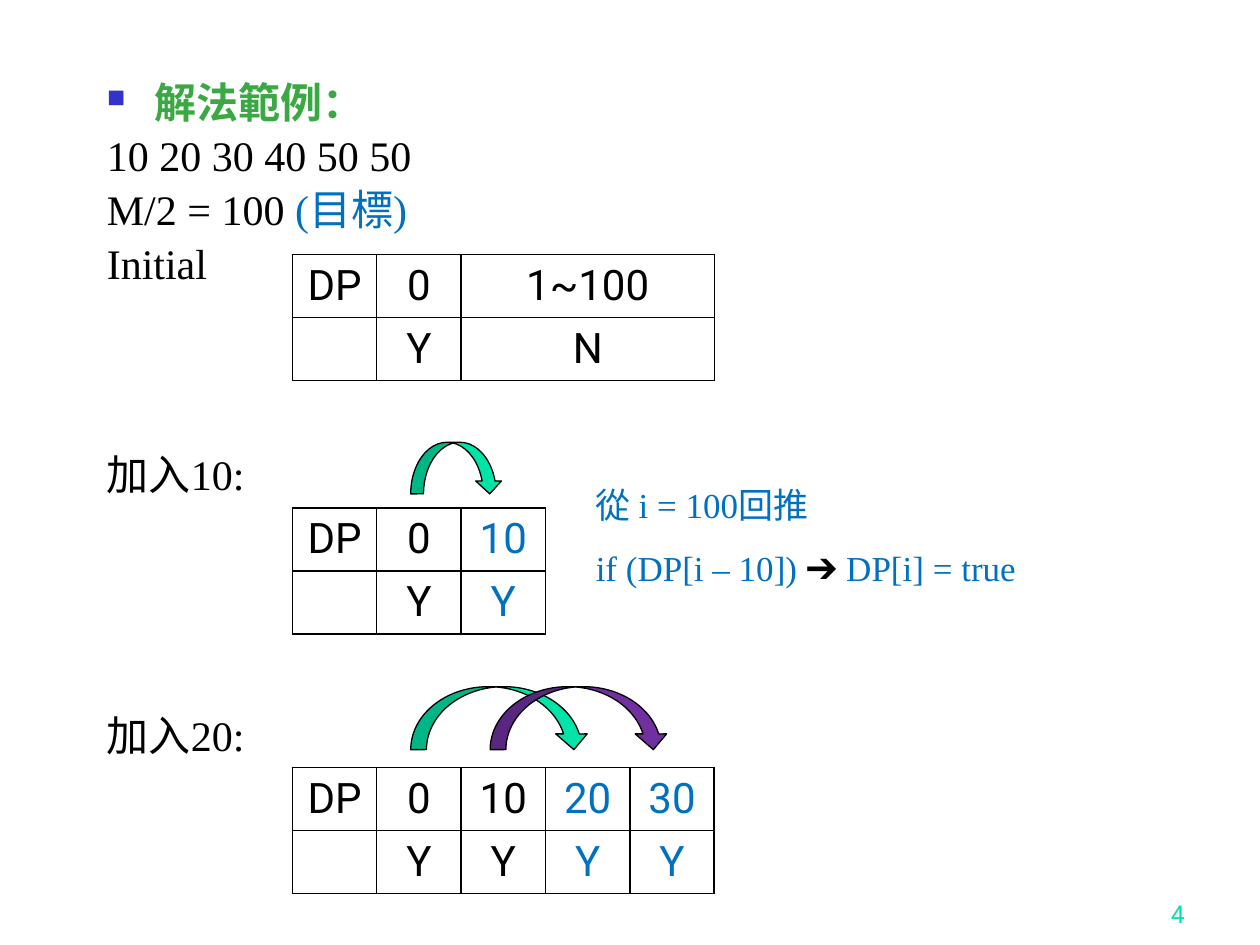
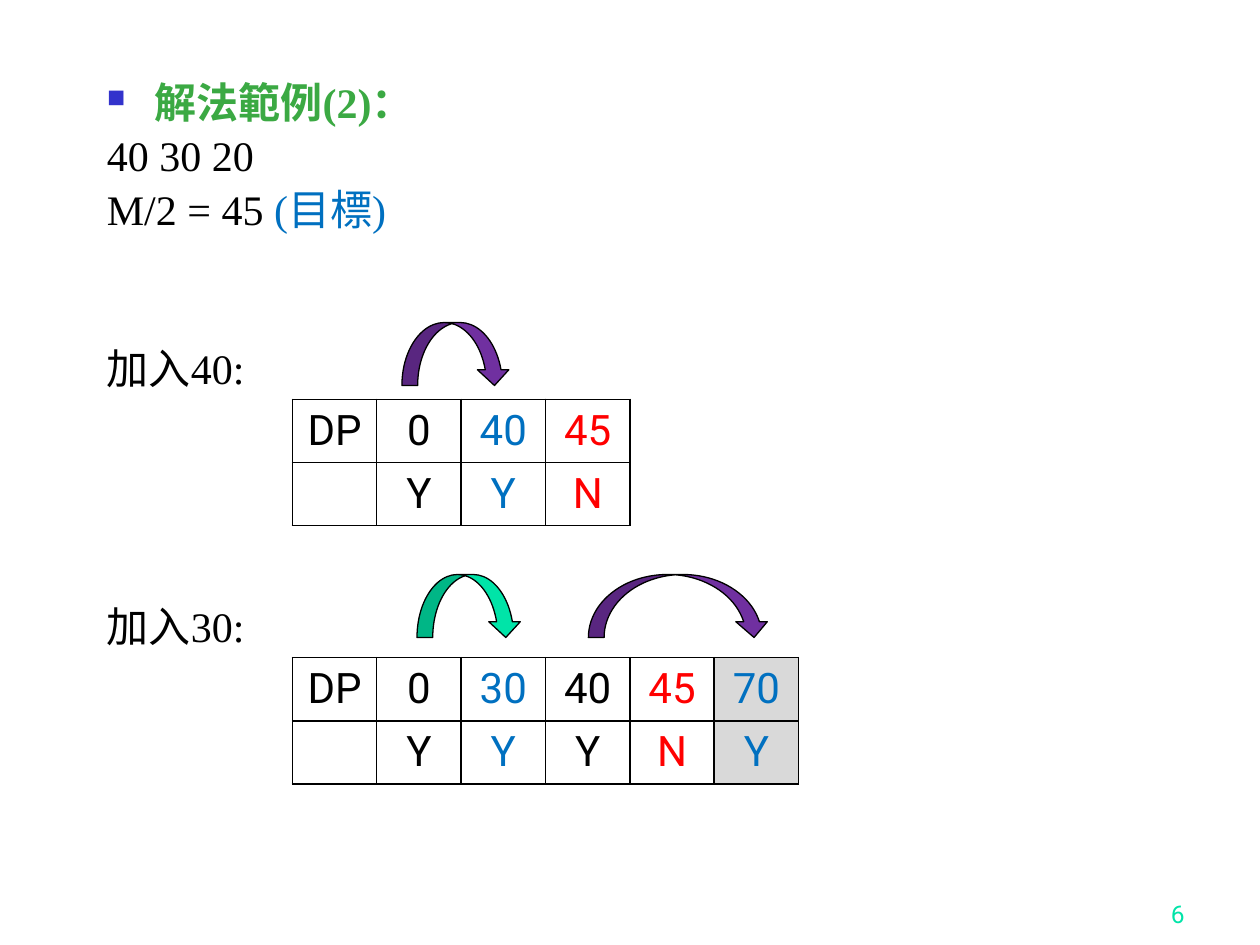
from dataclasses import dataclass

import lxml.etree
import pptx
import pptx.dml.color
import pptx.enum.shapes
import pptx.enum.text
import pptx.oxml.ns
import pptx.util
from pptx.util import Inches

# Shared look
BLACK, WHITE, GRAY, RED = "000000", "FFFFFF", "D9D9D9", "FF0000"
BLUE, GREEN, MINT, PURPLE = "0070C0", "3BA943", "00E4A8", "7030A0"
BULLET_BLUE = "3333CC"
SERIF, SANS = "Times New Roman", "Roboto"
LEFT = 0.75
TABLE_LEFT = 2.32
COLUMN_WIDTH = 0.67
ROW_HEIGHT = 0.41
TEXT_SIZE = 24
ALIGN = pptx.enum.text.PP_ALIGN
ANCHOR = pptx.enum.text.MSO_ANCHOR


@dataclass
class Run:
    text: str
    color: str = BLACK


@dataclass
class Column:
    amount: str
    reachable: str
    color: str = BLACK
    span: int = 1
    fill: str | None = None


@dataclass
class DpTable:
    top: float
    columns: list[Column]
    left: float = TABLE_LEFT


@dataclass
class StepLabel:
    text: str
    top: float


@dataclass
class JumpArrow:
    left: float
    top: float
    width: float
    height: float
    color: str


@dataclass
class ExampleSlide:
    number: str
    heading: str
    lines: list[list[Run]]
    body_width: float
    body_height: float
    labels: list[StepLabel]
    tables: list[DpTable]
    arrows: list[JumpArrow]


HEADER = Column("DP", "")
START = Column("0", "Y")

EXAMPLES = [
    ExampleSlide(
        "4", "解法範例：",
        [[Run("10 20 30 40 50 50")],
         [Run("M/2 = 100 "), Run("(目標)", BLUE)],
         [Run("Initial")]],
        8.97, 2.89,
        [StepLabel("加入10:", 3.51), StepLabel("加入20:", 5.58)],
        [DpTable(2.02, [HEADER, START, Column("1~100", "N", span=3)]),
         DpTable(4.03, [HEADER, START, Column("10", "Y", BLUE)]),
         DpTable(6.09, [HEADER, START, Column("10", "Y"),
                        Column("20", "Y", BLUE), Column("30", "Y", BLUE)])],
        [JumpArrow(3.26, 3.51, 0.73, 0.41, MINT),
         JumpArrow(3.26, 5.45, 1.42, 0.5, MINT),
         JumpArrow(3.89, 5.45, 1.42, 0.5, PURPLE)],
    ),
    ExampleSlide(
        "6", "解法範例(2)：",
        [[Run("40 30 20")],
         [Run("M/2 = 45 "), Run("(目標)", BLUE)]],
        3.24, 1.73,
        [StepLabel("加入40:", 2.67), StepLabel("加入30:", 4.72)],
        [DpTable(3.17, [HEADER, START, Column("40", "Y", BLUE)]),
         DpTable(3.17, [Column("45", "N", RED)], TABLE_LEFT + 3 * COLUMN_WIDTH),
         DpTable(5.22, [HEADER, START, Column("30", "Y", BLUE), Column("40", "Y"),
                        Column("45", "N", RED, fill=WHITE),
                        Column("70", "Y", BLUE, fill=GRAY)])],
        [JumpArrow(3.19, 2.56, 0.86, 0.5, PURPLE),
         JumpArrow(3.31, 4.56, 0.83, 0.5, MINT),
         JumpArrow(4.67, 4.56, 1.44, 0.5, PURPLE)],
    ),
]

RULE_LINES = [
    [Run("從 i = 100回推", BLUE)],
    [Run("if (DP[i – 10]) ", BLUE), Run("➔ "), Run("DP[i] = true", BLUE)],
]


def rgb(color: str) -> pptx.dml.color.RGBColor:
    return pptx.dml.color.RGBColor.from_string(color)


def add_element(parent, tag: str, **attributes: str):
    element = lxml.etree.SubElement(parent, pptx.oxml.ns.qn(tag))
    for name, value in attributes.items():
        element.set(name, value)
    return element


def format_paragraph(paragraph, size: float, font_name: str, color: str) -> None:
    for run in paragraph.runs:
        run.font.size = pptx.util.Pt(size)
        run.font.name = font_name
        run.font.color.rgb = rgb(color)


def fill_paragraph(paragraph, runs: list[Run], size: float, spacing: float) -> None:
    paragraph.line_spacing = spacing
    for part in runs:
        run = paragraph.add_run()
        run.text = part.text
        run.font.size = pptx.util.Pt(size)
        run.font.name = SERIF
        run.font.color.rgb = rgb(part.color)


def add_text_frame(slide, left: float, top: float, width: float, height: float,
                   grow: bool = False):
    box = slide.shapes.add_textbox(Inches(left), Inches(top), Inches(width), Inches(height))
    text_frame = box.text_frame
    text_frame.word_wrap = True
    if grow:
        text_frame.auto_size = pptx.enum.text.MSO_AUTO_SIZE.SHAPE_TO_FIT_TEXT
    return text_frame


def add_bullet(paragraph) -> None:
    properties = paragraph._p.get_or_add_pPr()
    indent = Inches(0.38)
    properties.set("marL", str(indent))
    properties.set("indent", str(-indent))
    bullet_color = add_element(properties, "a:buClr")
    add_element(bullet_color, "a:srgbClr", val=BULLET_BLUE)
    add_element(properties, "a:buSzPct", val="60000")
    add_element(properties, "a:buChar", char="■")


def add_body(slide, example: ExampleSlide) -> None:
    text_frame = add_text_frame(slide, LEFT, 0.36, example.body_width, example.body_height)
    heading = text_frame.paragraphs[0]
    fill_paragraph(heading, [Run(example.heading, GREEN)], TEXT_SIZE, 1.5)
    heading.runs[0].font.bold = True
    for line in example.lines:
        fill_paragraph(text_frame.add_paragraph(), line, TEXT_SIZE, 0.9)
    for paragraph in text_frame.paragraphs:
        paragraph.space_before = pptx.util.Pt(0.2 * TEXT_SIZE)
    add_bullet(heading)


def add_slide_number(slide, number: str) -> None:
    text_frame = add_text_frame(slide, 7.42, 6.92, 2.08, 0.5)
    text_frame.vertical_anchor = ANCHOR.BOTTOM
    text_frame.text = number
    paragraph = text_frame.paragraphs[0]
    paragraph.alignment = ALIGN.RIGHT
    format_paragraph(paragraph, 14, SANS, MINT)


def add_step_label(slide, label: StepLabel) -> None:
    text_frame = add_text_frame(slide, LEFT, label.top, 1.3, 0.5, grow=True)
    text_frame.text = label.text
    format_paragraph(text_frame.paragraphs[0], TEXT_SIZE, SERIF, BLACK)


def add_rule(slide) -> None:
    text_frame = add_text_frame(slide, 4.63, 3.62, 3.68, 1.05, grow=True)
    first, second = text_frame.paragraphs[0], text_frame.add_paragraph()
    for paragraph, line in zip((first, second), RULE_LINES):
        fill_paragraph(paragraph, line, 20, 1.5)


def add_cell_borders(cell) -> None:
    properties = cell._tc.get_or_add_tcPr()
    for position, side in enumerate(("a:lnL", "a:lnR", "a:lnT", "a:lnB")):
        border = add_element(properties, side, w=str(pptx.util.Pt(1)))
        add_element(add_element(border, "a:solidFill"), "a:srgbClr", val=BLACK)
        properties.insert(position, border)


def format_cell(cell, text: str, column: Column) -> None:
    cell.text = text
    cell.vertical_anchor = ANCHOR.MIDDLE
    paragraph = cell.text_frame.paragraphs[0]
    paragraph.alignment = ALIGN.CENTER
    format_paragraph(paragraph, TEXT_SIZE, SANS, column.color)
    if column.fill:
        cell.fill.solid()
        cell.fill.fore_color.rgb = rgb(column.fill)
    else:
        cell.fill.background()
    add_cell_borders(cell)


def add_dp_table(slide, dp_table: DpTable) -> None:
    width = COLUMN_WIDTH * sum(column.span for column in dp_table.columns)
    table = slide.shapes.add_table(
        2, len(dp_table.columns), Inches(dp_table.left), Inches(dp_table.top),
        Inches(width), Inches(2 * ROW_HEIGHT)).table
    table.first_row = False
    table.horz_banding = False
    for row in table.rows:
        row.height = Inches(ROW_HEIGHT)
    for index, column in enumerate(dp_table.columns):
        table.columns[index].width = Inches(COLUMN_WIDTH * column.span)
        for row_index, text in enumerate((column.amount, column.reachable)):
            format_cell(table.cell(row_index, index), text, column)


def add_jump_arrow(slide, arrow: JumpArrow) -> None:
    shape = slide.shapes.add_shape(
        pptx.enum.shapes.MSO_SHAPE.CURVED_DOWN_ARROW, Inches(arrow.left),
        Inches(arrow.top), Inches(arrow.width), Inches(arrow.height))
    shape.shadow.inherit = False
    shape.fill.solid()
    shape.fill.fore_color.rgb = rgb(arrow.color)
    shape.line.color.rgb = rgb(BLACK)
    shape.line.width = pptx.util.Pt(0.75)


def add_example(presentation, example: ExampleSlide):
    slide = presentation.slides.add_slide(presentation.slide_layouts[6])
    add_slide_number(slide, example.number)
    add_body(slide, example)
    for label in example.labels:
        add_step_label(slide, label)
    for dp_table in example.tables:
        add_dp_table(slide, dp_table)
    for arrow in example.arrows:
        add_jump_arrow(slide, arrow)
    return slide


def main() -> None:
    presentation = pptx.Presentation()
    presentation.slide_width = Inches(10)
    presentation.slide_height = Inches(7.5)
    first_slide, _ = [add_example(presentation, example) for example in EXAMPLES]
    # Update rule beside the first step
    add_rule(first_slide)
    presentation.save("out.pptx")


if __name__ == "__main__":
    main()
